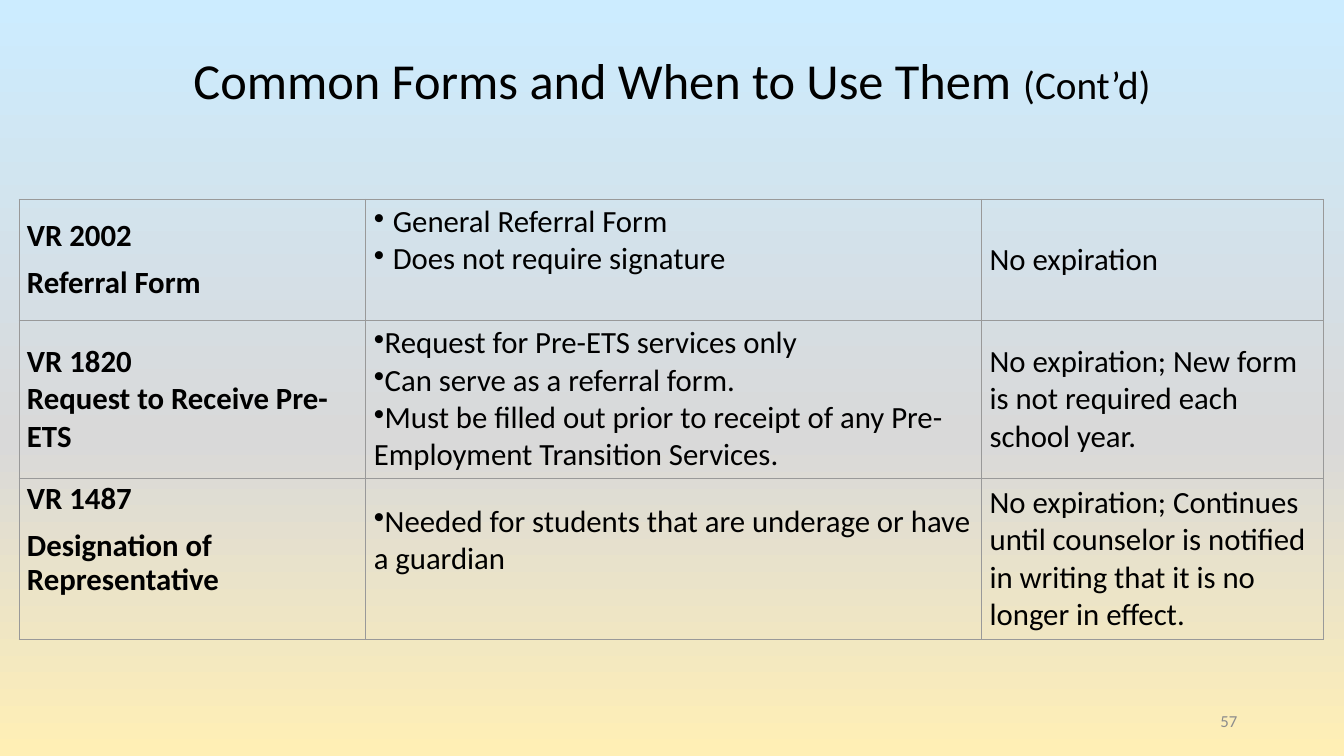
from copy import deepcopy
from dataclasses import dataclass

from pptx import Presentation
from pptx.dml.color import RGBColor
from pptx.enum.text import MSO_ANCHOR as Anchor, MSO_AUTO_SIZE as AutoSize, PP_ALIGN as Align
from pptx.oxml import parse_xml
from pptx.oxml.ns import nsdecls, qn
from pptx.oxml.xmlchemy import OxmlElement
from pptx.slide import Slide
from pptx.table import _Cell as Cell
from pptx.util import Cm, Pt

FONT = "Calibri"
BLACK = RGBColor(0x00, 0x00, 0x00)
NUMBER_GREY = RGBColor(0x8C, 0x8C, 0x8C)
BORDER_GREY = RGBColor(0x99, 0x99, 0x99)
SKY = RGBColor(0xCC, 0xEC, 0xFF)
MIST = RGBColor(0xD9, 0xD9, 0xD9)
SAND = RGBColor(0xFF, 0xEF, 0xB5)

COLUMN_WIDTHS = (8.74, 15.52, 8.61)


@dataclass(frozen=True)
class Entry:
    lines: tuple[str, ...]
    bold: bool = False
    bulleted: bool = False
    indent: float = 0
    spaced: bool = False
    anchor: Anchor = Anchor.MIDDLE
    top: float = 0.1


@dataclass(frozen=True)
class FormRow:
    height: float
    form: Entry
    use: Entry
    expiry: Entry


FORMS = (
    FormRow(
        3.05,
        Entry(("VR 2002", "Referral Form"), bold=True, spaced=True),
        Entry(("General Referral Form", "Does not require signature"),
              bulleted=True, indent=0.48, anchor=Anchor.TOP),
        Entry(("No expiration",)),
    ),
    FormRow(
        3.98,
        Entry(("VR 1820", "Request to Receive Pre-ETS"), bold=True),
        Entry(("Request for Pre-ETS services only",
               "Can serve as a referral form.",
               "Must be filled out prior to receipt of any "
               "Pre-Employment Transition Services."), bulleted=True),
        Entry(("No expiration; New form is not required each school year.",)),
    ),
    FormRow(
        4.06,
        Entry(("VR 1487", "Designation of Representative"),
              bold=True, spaced=True, anchor=Anchor.TOP),
        Entry(("Needed for students that are underage or have a guardian",),
              bulleted=True, anchor=Anchor.TOP, top=0.62),
        Entry(("No expiration; Continues until counselor is notified in "
               "writing that it is no longer in effect.",)),
    ),
)


def set_background(s: Slide) -> None:
    fill = s.background.fill
    fill.gradient()
    fill.gradient_angle = 270
    first, last = fill.gradient_stops
    first.color.rgb, first.position = MIST, 0.58
    stops = s.element.find(".//" + qn("a:gsLst"))
    stops.insert(1, deepcopy(stops[0]))
    first.color.rgb, first.position = SKY, 0
    last.color.rgb, last.position = SAND, 1


def add_title(s: Slide) -> None:
    title = s.shapes.title
    title.left, title.top, title.width, title.height = Cm(0), Cm(1.02), Cm(33.87), Cm(2.13)
    tf = title.text_frame
    tf.auto_size = AutoSize.NONE
    tf.vertical_anchor = Anchor.MIDDLE
    p = tf.paragraphs[0]
    p.alignment = Align.CENTER
    p.line_spacing = 0.9
    for text, size in (("Common Forms and When to Use Them ", 36), ("(Cont’d)", 28)):
        r = p.add_run()
        r.text = text
        r.font.name, r.font.size, r.font.color.rgb = FONT, Pt(size), BLACK


def add_borders(cell: Cell) -> None:
    tc_pr = cell._tc.get_or_add_tcPr()
    for side in "LRTB":
        tc_pr.append(parse_xml(
            f'<a:ln{side} {nsdecls("a")} w="{Pt(0.75)}"><a:solidFill>'
            f'<a:srgbClr val="{BORDER_GREY}"/></a:solidFill></a:ln{side}>'))


def fill_cell(cell: Cell, entry: Entry) -> None:
    add_borders(cell)
    cell.fill.background()
    cell.vertical_anchor = entry.anchor
    cell.margin_left = cell.margin_right = Cm(0.2)
    cell.margin_top, cell.margin_bottom = Cm(entry.top), Cm(0.1)
    tf = cell.text_frame
    for i, line in enumerate(entry.lines):
        p = tf.add_paragraph() if i else tf.paragraphs[0]
        p.text = line
        if entry.spaced:
            p.line_spacing = 0.9
            p.space_before = Pt(10 if i else 0)
        if entry.bulleted:
            p_pr = p._p.get_or_add_pPr()
            p_pr.set("marL", str(Cm(entry.indent)))
            p_pr.set("indent", str(-Cm(entry.indent)))
            bullet = OxmlElement("a:buChar")
            bullet.set("char", "•")
            p_pr.append(bullet)
        font = p.font
        font.name, font.size, font.bold, font.color.rgb = FONT, Pt(22), entry.bold, BLACK


def add_forms_table(s: Slide) -> None:
    height = sum(row.height for row in FORMS)
    table = s.shapes.add_table(len(FORMS), len(COLUMN_WIDTHS), Cm(0.48), Cm(5.02),
                               Cm(sum(COLUMN_WIDTHS)), Cm(height)).table
    table.first_row = table.horz_banding = False
    for column, width in zip(table.columns, COLUMN_WIDTHS):
        column.width = Cm(width)
    for row, form_row in zip(table.rows, FORMS):
        row.height = Cm(form_row.height)
        for cell, entry in zip(row.cells, (form_row.form, form_row.use, form_row.expiry)):
            fill_cell(cell, entry)


def add_slide_number(s: Slide) -> None:
    tf = s.shapes.add_textbox(Cm(30.4), Cm(17.65), Cm(1.14), Cm(1.02)).text_frame
    tf.word_wrap = True
    tf.margin_left = tf.margin_right = 0
    tf.vertical_anchor = Anchor.MIDDLE
    p = tf.paragraphs[0]
    p.text = "57"
    p.alignment = Align.CENTER
    p.font.name, p.font.size, p.font.color.rgb = FONT, Pt(12), NUMBER_GREY


def main() -> None:
    prs = Presentation()
    prs.slide_width, prs.slide_height = Cm(33.87), Cm(19.05)
    s = prs.slides.add_slide(prs.slide_layouts[5])
    set_background(s)
    add_title(s)
    add_forms_table(s)
    add_slide_number(s)
    prs.save("out.pptx")


if __name__ == "__main__":
    main()
